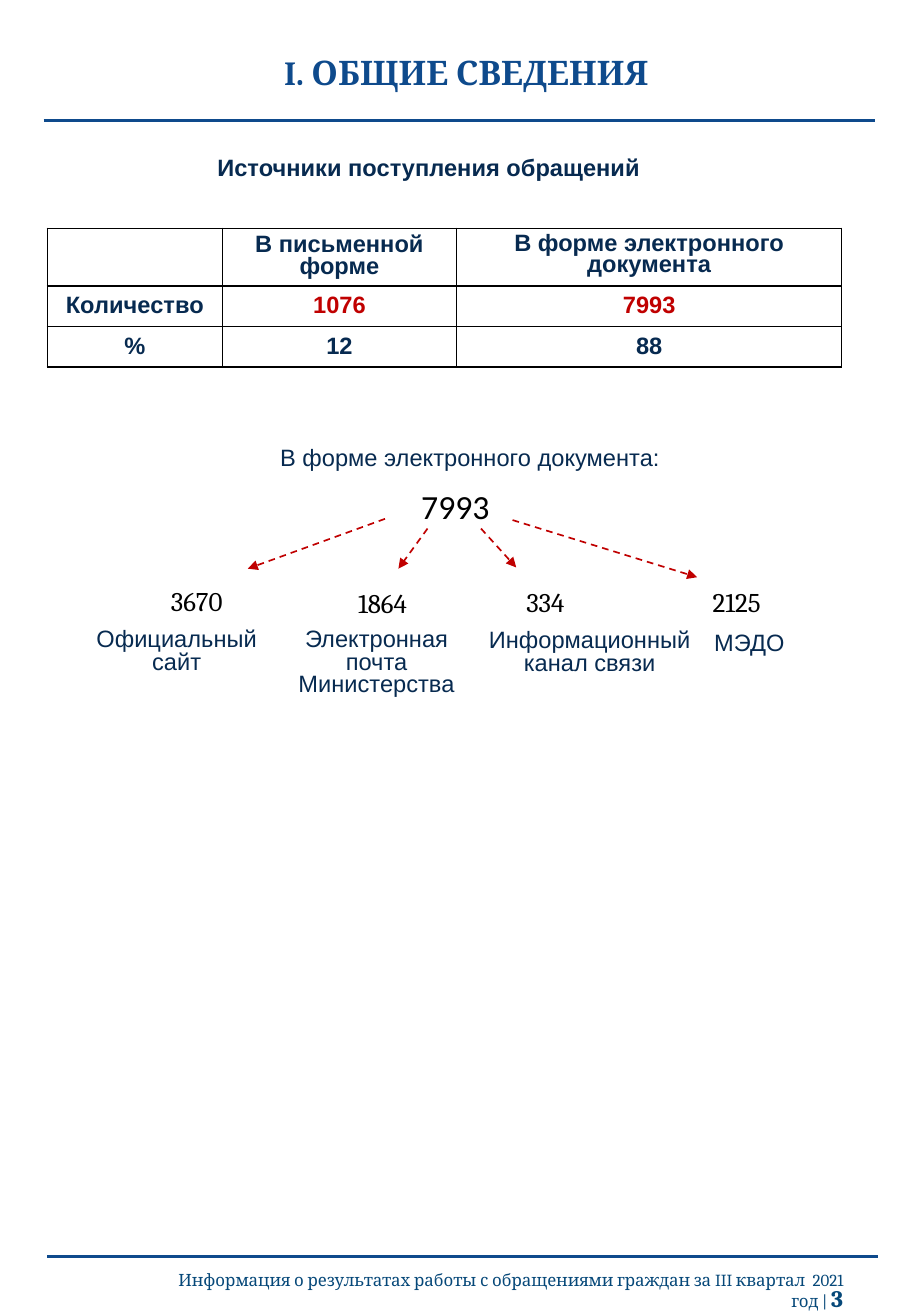
from lxml.etree import SubElement
from pptx import Presentation
from pptx.dml.color import RGBColor
from pptx.enum.dml import MSO_LINE
from pptx.enum.shapes import MSO_CONNECTOR
from pptx.enum.text import MSO_ANCHOR, PP_ALIGN
from pptx.oxml.ns import qn
from pptx.util import Inches, Pt

BLUE, NAVY, RED, BLACK = "0E4A8C", "072A50", "C00000", "000000"

prs = Presentation()
prs.slide_width, prs.slide_height = Inches(7.5), Inches(10.83)
s = prs.slides.add_slide(prs.slide_layouts[6])


def write(tf, runs, font, color, spacing=1.0, align=PP_ALIGN.CENTER):
    """Fill the first paragraph with (text, size, bold) runs."""
    tf.word_wrap = True
    p = tf.paragraphs[0]
    p.alignment, p.line_spacing = align, spacing
    for text, size, bold in runs:
        r = p.add_run()
        r.text = text
        r.font.name, r.font.size, r.font.bold = font, Pt(size), bold
        r.font.color.rgb = RGBColor.from_string(color)


def add_line(x1, y1, x2, y2, color, width):
    line = s.shapes.add_connector(MSO_CONNECTOR.STRAIGHT, Inches(x1), Inches(y1),
                                  Inches(x2), Inches(y2))
    line.line.color.rgb = RGBColor.from_string(color)
    line.line.width = Pt(width)
    SubElement(line._element.spPr, qn("a:effectLst"))
    return line


# Rules under the title and above the footer
add_line(0.36, 0.99, 7.2, 0.99, BLUE, 1.5)
add_line(0.39, 10.34, 7.23, 10.34, BLUE, 1.5)

# Title, headings, total and footer
C, R = PP_ALIGN.CENTER, PP_ALIGN.RIGHT
footer = "Информация о результатах работы с обращениями граждан за III квартал  2021 год | "
texts = [
    (0.34, 0.3, 7, 0.51, [("I. ОБЩИЕ СВЕДЕНИЯ", 20, True)], "Cambria", BLUE, 0.9, C),
    (1.13, 1.25, 4.8, 0.29, [("Источники поступления обращений", 14, True)],
     "Arial", NAVY, 0.8, C),
    (1.67, 3.64, 4.4, 0.29, [("В форме электронного документа:", 14, False)],
     "Arial", NAVY, 0.8, C),
    (3.25, 3.95, 1, 0.44, [("7993", 20, False)], "Calibri", BLACK, 1.0, C),
    (1.33, 10.43, 5.71, 0.29, [(footer, 10, False), ("3", 14, True)],
     "Cambria", "064879", 0.8, R),
]

# Electronic channels: count (left, top, width), label (left, top, width)
channels = [
    ("3670", 1.21, 4.76, 0.82, "Официальный сайт", 0.67, 5.13, 1.57),
    ("1864", 2.78, 4.78, 0.74, "Электронная почта Министерства", 2.24, 5.13, 1.72),
    ("334", 4.14, 4.77, 0.7, "Информационный канал связи", 3.92, 5.14, 1.87),
    ("2125", 5.71, 4.77, 0.71, "МЭДО", 5.34, 5.16, 1.66),
]
for count, cx, cy, cw, label, lx, ly, lw in channels:
    texts.append((cx, cy, cw, 0.37, [(count, 16, False)], "Cambria", BLACK, 1.0, C))
    texts.append((lx, ly, lw, 0.48, [(label, 14, False)], "Arial", NAVY, 0.8, C))

for x, y, w, h, runs, font, color, spacing, align in texts:
    sp = s.shapes.add_textbox(Inches(x), Inches(y), Inches(w), Inches(h))
    write(sp.text_frame, runs, font, color, spacing, align)
    if y == 0.3:
        sp.text_frame.vertical_anchor = MSO_ANCHOR.BOTTOM

# Arrows from the total to the channels
arrows = [(3.17, 4.27, 2.04, 4.68), (3.52, 4.35, 3.28, 4.68),
          (3.96, 4.35, 4.25, 4.67), (4.22, 4.28, 5.74, 4.75)]
for ends in arrows:
    arrow = add_line(*ends, RED, 1)
    arrow.line.dash_style = MSO_LINE.DASH
    SubElement(arrow.line._get_or_add_ln(), qn("a:tailEnd"), type="triangle")

# Table of sources
rows = [["", "В письменной форме", "В форме электронного документа"],
        ["Количество", "1076", "7993"],
        ["%", "12", "88"]]
table = s.shapes.add_table(3, 3, Inches(0.39), Inches(1.88), Inches(6.54), Inches(1.13)).table
table.first_row = table.horz_banding = False
for col, width in zip(table.columns, (1.44, 1.93, 3.17)):
    col.width = Inches(width)
for row, height in zip(table.rows, (0.47, 0.33, 0.33)):
    row.height = Inches(height)
for i, row in enumerate(rows):
    for j, text in enumerate(row):
        cell = table.cell(i, j)
        if text:
            color = RED if i == 1 and j else NAVY
            write(cell.text_frame, [(text, 14, True)], "Arial", color, 1.0 if i else 0.8)
        if (i, j) == (0, 1):
            cell.vertical_anchor = MSO_ANCHOR.MIDDLE
        tcPr = cell._tc.get_or_add_tcPr()
        for side in ("lnL", "lnR", "lnT", "lnB"):
            ln = SubElement(tcPr, qn("a:" + side), w=str(Pt(1)))
            SubElement(SubElement(ln, qn("a:solidFill")), qn("a:srgbClr"), val=BLACK)
        cell.fill.background()

prs.save("out.pptx")
